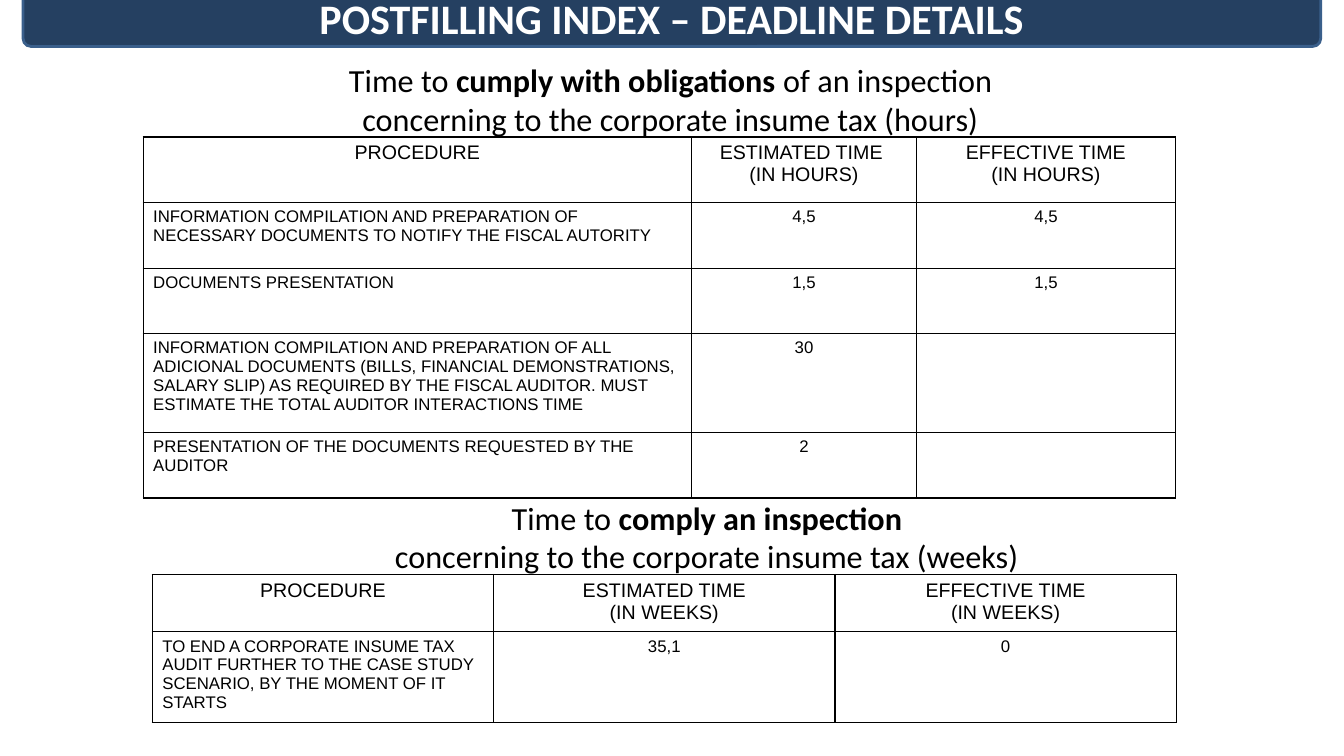
import pptx
import pptx.dml.color
import pptx.enum.shapes
import pptx.enum.text
import pptx.oxml
import pptx.oxml.ns
import pptx.util

COLORS = {"bar": "254061", "bar_line": "3A5F8B", "title": "FFFFFF", "text": "000000"}
FORMATS = {
    "title": {"name": "Calibri", "size": pptx.util.Pt(30), "bold": True},
    "heading": {"name": "Calibri", "size": pptx.util.Pt(23), "bold": False},
    "strong": {"name": "Calibri", "size": pptx.util.Pt(23), "bold": True},
    "header": {"name": "Arial", "size": pptx.util.Pt(14), "bold": False},
    "body": {"name": "Arial", "size": pptx.util.Pt(12), "bold": False},
}
CENTER = pptx.enum.text.PP_ALIGN.CENTER
LEFT = pptx.enum.text.PP_ALIGN.LEFT

HOURS_ROWS = [
    ["PROCEDURE", "ESTIMATED TIME \n(IN HOURS)", "EFFECTIVE TIME\n(IN HOURS)"],
    ["INFORMATION COMPILATION AND PREPARATION OF NECESSARY DOCUMENTS "
     "TO NOTIFY THE FISCAL AUTORITY", "4,5", "4,5"],
    ["DOCUMENTS PRESENTATION", "1,5", "1,5"],
    ["INFORMATION COMPILATION AND PREPARATION OF ALL ADICIONAL DOCUMENTS "
     "(BILLS, FINANCIAL DEMONSTRATIONS, SALARY SLIP) AS REQUIRED BY THE FISCAL AUDITOR. "
     "MUST ESTIMATE THE TOTAL AUDITOR INTERACTIONS TIME", "30", ""],
    ["PRESENTATION OF THE DOCUMENTS REQUESTED BY THE AUDITOR", "2", ""],
]
WEEKS_ROWS = [
    ["PROCEDURE", "ESTIMATED TIME\n(IN WEEKS)", "EFFECTIVE TIME\n(IN WEEKS)"],
    ["TO END A CORPORATE INSUME TAX AUDIT FURTHER TO THE CASE STUDY SCENARIO, "
     "BY THE MOMENT OF IT STARTS", "35,1", "0"],
]


class SlideBuilder:
    """Draws on one slide; all lengths are percentages of the slide's size."""

    def __init__(self, presentation):
        self.width = presentation.slide_width
        self.height = presentation.slide_height
        self.slide = presentation.slides.add_slide(presentation.slide_layouts[6])

    def across(self, percent):
        return round(self.width * percent / 100)

    def down(self, percent):
        return round(self.height * percent / 100)

    def place(self, left, top, width, height):
        return self.across(left), self.down(top), self.across(width), self.down(height)

    def color(self, name):
        return pptx.dml.color.RGBColor.from_string(COLORS[name])

    def fill_text(self, text_frame, lines, alignment=CENTER, color="text"):
        """Fill a frame with lines, each a list of (text, format name) runs."""
        text_frame.word_wrap = True
        for index, runs in enumerate(lines):
            paragraph = text_frame.paragraphs[0] if index == 0 else text_frame.add_paragraph()
            paragraph.alignment = alignment
            for text, format_name in runs:
                run = paragraph.add_run()
                run.text = text
                for attribute, value in FORMATS[format_name].items():
                    setattr(run.font, attribute, value)
                run.font.color.rgb = self.color(color)

    def title_bar(self, box, text):
        shape = self.slide.shapes.add_shape(
            pptx.enum.shapes.MSO_SHAPE.ROUNDED_RECTANGLE, *self.place(*box))
        shape.shadow.inherit = False
        shape.adjustments[0] = 0.14
        shape.fill.solid()
        shape.fill.fore_color.rgb = self.color("bar")
        shape.line.color.rgb = self.color("bar_line")
        shape.line.width = pptx.util.Pt(2)
        shape.text_frame.vertical_anchor = pptx.enum.text.MSO_ANCHOR.MIDDLE
        self.fill_text(shape.text_frame, [[(text, "title")]], color="title")

    def heading(self, box, lines):
        shape = self.slide.shapes.add_textbox(*self.place(*box))
        self.fill_text(shape.text_frame, lines)

    def border(self, cell):
        properties = cell._tc.get_or_add_tcPr()
        for side in ("lnL", "lnR", "lnT", "lnB"):
            properties.append(pptx.oxml.parse_xml(
                f'<a:{side} {pptx.oxml.ns.nsdecls("a")} w="12700"><a:solidFill>'
                f'<a:srgbClr val="{COLORS["text"]}"/></a:solidFill></a:{side}>'))

    def table(self, left, top, column_widths, row_heights, rows):
        box = self.place(left, top, sum(column_widths), sum(row_heights))
        table = self.slide.shapes.add_table(len(rows), len(column_widths), *box).table
        table.first_row = table.horz_banding = False
        for column, width in zip(table.columns, column_widths):
            column.width = self.across(width)
        for row, height in zip(table.rows, row_heights):
            row.height = self.down(height)
        for row_index, texts in enumerate(rows):
            format_name = "body" if row_index else "header"
            for column_index, text in enumerate(texts):
                cell = table.cell(row_index, column_index)
                self.border(cell)
                cell.fill.background()
                alignment = LEFT if row_index and column_index == 0 else CENTER
                if text:
                    lines = [[(line, format_name)] for line in text.split("\n")]
                    self.fill_text(cell.text_frame, lines, alignment)


def main():
    presentation = pptx.Presentation()
    presentation.slide_width = pptx.util.Inches(13.33)
    presentation.slide_height = pptx.util.Inches(7.5)
    builder = SlideBuilder(presentation)
    builder.title_bar((1.72, -1.33, 96.55, 7.47), "POSTFILLING INDEX – DEADLINE DETAILS")
    builder.heading((7.95, 7.33, 84.47, 12), [
        [("Time to ", "heading"), ("cumply with obligations", "strong"),
         (" of an inspection ", "heading")],
        [("concerning to the corporate insume tax (hours) ", "heading")],
    ])
    builder.heading((9.08, 65.2, 87.62, 12), [
        [("Time to ", "heading"), ("comply an inspection ", "strong")],
        [("concerning to the corporate insume tax (weeks) ", "heading")],
    ])
    builder.table(10.65, 18.13, [40.81, 16.73, 19.28],
                  [8.67, 8.67, 8.67, 13.07, 8.67], HOURS_ROWS)
    builder.table(11.33, 76, [25.4] * 3, [7.2, 11.33], WEEKS_ROWS)
    presentation.save("out.pptx")


if __name__ == "__main__":
    main()
